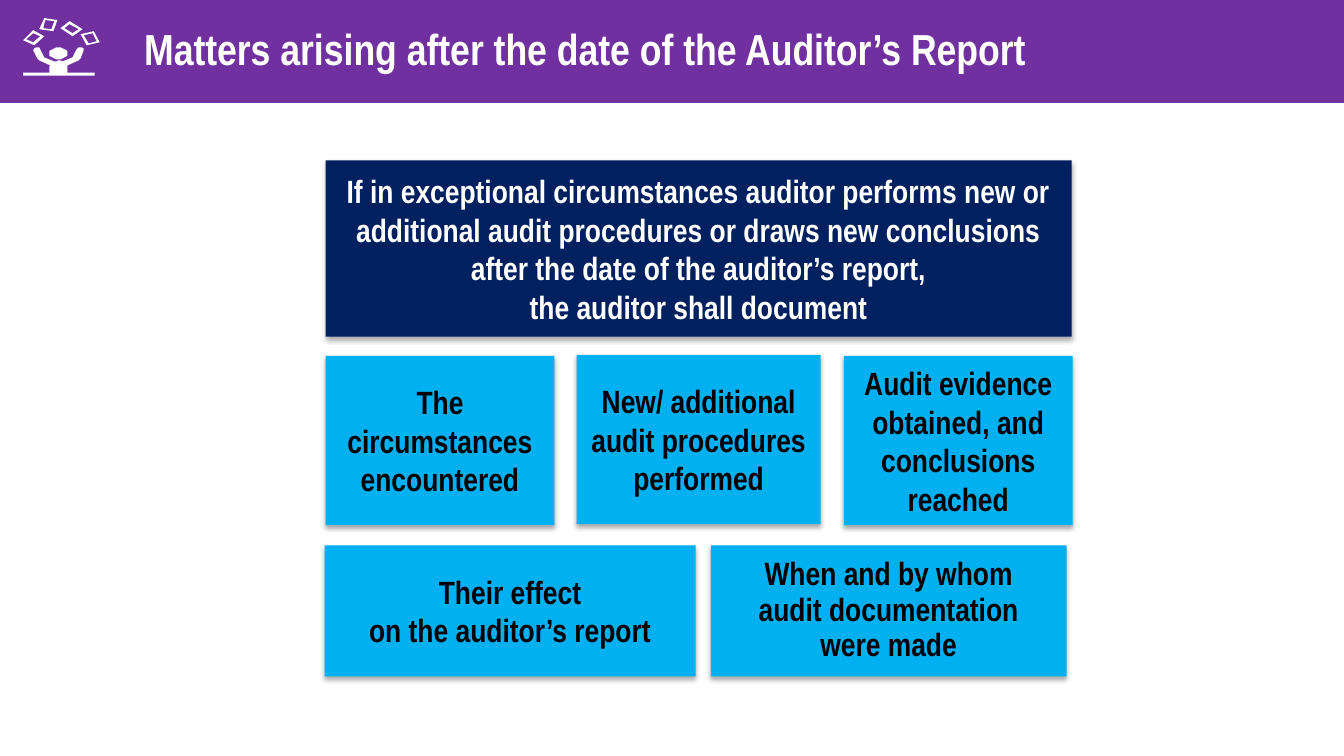
import math

import pptx
import pptx.util
from pptx.dml.color import RGBColor
from pptx.enum.shapes import MSO_SHAPE
from pptx.enum.text import MSO_ANCHOR, PP_ALIGN
from pptx.oxml import parse_xml
from pptx.oxml.ns import nsdecls

PX = 9144  # 100 px to the inch
FONT = "Arial Narrow"
WHITE = RGBColor(0xFF, 0xFF, 0xFF)
BLACK = RGBColor(0x00, 0x00, 0x00)
PURPLE = RGBColor(0x70, 0x30, 0xA0)
NAVY = RGBColor(0x00, 0x20, 0x60)
SKY = RGBColor(0x00, 0xB0, 0xF0)

# Icon outlines: each sheet of paper is an outer and an inner ring
SHEETS = [
    [(33, 30), (44, 36), (34, 45), (23, 40)],
    [(33, 33), (26, 39), (33, 42), (40, 36)],
    [(69, 21), (60, 28), (72, 36), (82, 29)],
    [(69, 24), (78, 29), (72, 33), (64, 28)],
    [(57, 20), (44, 18), (39, 29), (53, 31)],
    [(54, 21), (51, 29), (43, 28), (45, 20)],
    [(93, 31), (99, 42), (86, 45), (80, 34)],
    [(92, 33), (83, 35), (88, 43), (96, 41)],
]
HEAD = [(58 + 9 * math.cos(math.radians(a)), 53 + 6 * math.sin(math.radians(a)))
        for a in range(0, 360, 15)]
BODY = [
    (58, 60), (56, 61), (54, 61), (44, 57), (40, 49), (39, 47), (36, 47),
    (34, 48), (33, 50), (37, 58), (39, 60), (50, 65), (49, 66), (49, 72),
    (23, 72), (23, 75), (94, 75), (94, 72), (67, 72), (67, 65), (78, 60),
    (80, 58), (83, 50), (83, 48), (81, 47), (78, 47), (76, 49), (72, 57),
    (62, 61), (60, 60),
]


def add_shadow(sp):
    sp.shadow.inherit = False
    effects = sp._element.spPr.find(pptx.oxml.ns.qn("a:effectLst"))
    effects.append(parse_xml(
        f'<a:outerShdw {nsdecls("a")} blurRad="44450" dist="27940" dir="5400000" '
        'algn="ctr" rotWithShape="0"><a:srgbClr val="000000">'
        '<a:alpha val="32000"/></a:srgbClr></a:outerShdw>'))


def add_box(s, left, top, width, height, fill, lines, color, size=23, inset=10):
    """Rectangle with one bold centred paragraph for each line."""
    sp = s.shapes.add_shape(MSO_SHAPE.RECTANGLE, left * PX, top * PX,
                            width * PX, height * PX)
    sp.shadow.inherit = False
    sp.fill.solid()
    sp.fill.fore_color.rgb = fill
    sp.line.fill.background()
    tf = sp.text_frame
    tf.word_wrap = True
    tf.vertical_anchor = MSO_ANCHOR.MIDDLE
    tf.margin_left = tf.margin_right = inset * PX
    tf.margin_top = tf.margin_bottom = inset * PX
    tf.text = "\n".join(lines)
    for p in tf.paragraphs:
        p.alignment = PP_ALIGN.CENTER
        p.font.name = FONT
        p.font.size = pptx.util.Pt(size)
        p.font.bold = True
        p.font.color.rgb = color
    return sp


def add_title_bar(s, text):
    sp = add_box(s, -4, -8, 1337, 111, PURPLE, [text], WHITE, size=31, inset=5)
    sp.line.color.rgb = WHITE
    sp.line.width = pptx.util.Pt(0.5)
    sp.text_frame.margin_left = 147 * PX
    sp.text_frame.paragraphs[0].alignment = PP_ALIGN.LEFT


def add_icon(s, rings):
    fb = s.shapes.build_freeform(*rings[0][0], scale=PX)
    for i, ring in enumerate(rings):
        if i:
            fb.move_to(*ring[0])
        fb.add_line_segments(ring[1:], close=True)
    sp = fb.convert_to_shape()
    sp.shadow.inherit = False
    sp.fill.solid()
    sp.fill.fore_color.rgb = WHITE
    sp.line.fill.background()


def main():
    prs = pptx.Presentation()
    prs.slide_width, prs.slide_height = 1333 * PX, 750 * PX
    s = prs.slides.add_slide(prs.slide_layouts[6])

    # Header
    add_title_bar(s, "Matters arising after the date of the Auditor’s Report")
    add_icon(s, SHEETS + [HEAD, BODY])

    # Condition
    add_shadow(add_box(s, 323, 159, 740, 175, NAVY, [
        "If in exceptional circumstances auditor performs new or additional audit "
        "procedures or draws new conclusions after the date of the auditor’s report,",
        "the auditor shall document"], WHITE))

    # Matters to document: left, top, width, height, inset, lines
    matters = [
        (323, 353, 227, 168, 10, ["The", "circumstances encountered"]),
        (572, 352, 242, 168, 10, ["New/ additional audit procedures performed"]),
        (837, 353, 227, 168, 10, ["Audit evidence obtained, and conclusions reached"]),
        (322, 541, 368, 130, 10, ["Their effect", "on the auditor’s report"]),
        (705, 541, 353, 130, 20, ["When and by whom audit documentation were made"]),
    ]
    for left, top, width, height, inset, lines in matters:
        sp = add_box(s, left, top, width, height, SKY, lines, BLACK, inset=inset)
        add_shadow(sp)
    sp.text_frame.paragraphs[0].line_spacing = 0.92

    prs.save("out.pptx")


if __name__ == "__main__":
    main()
